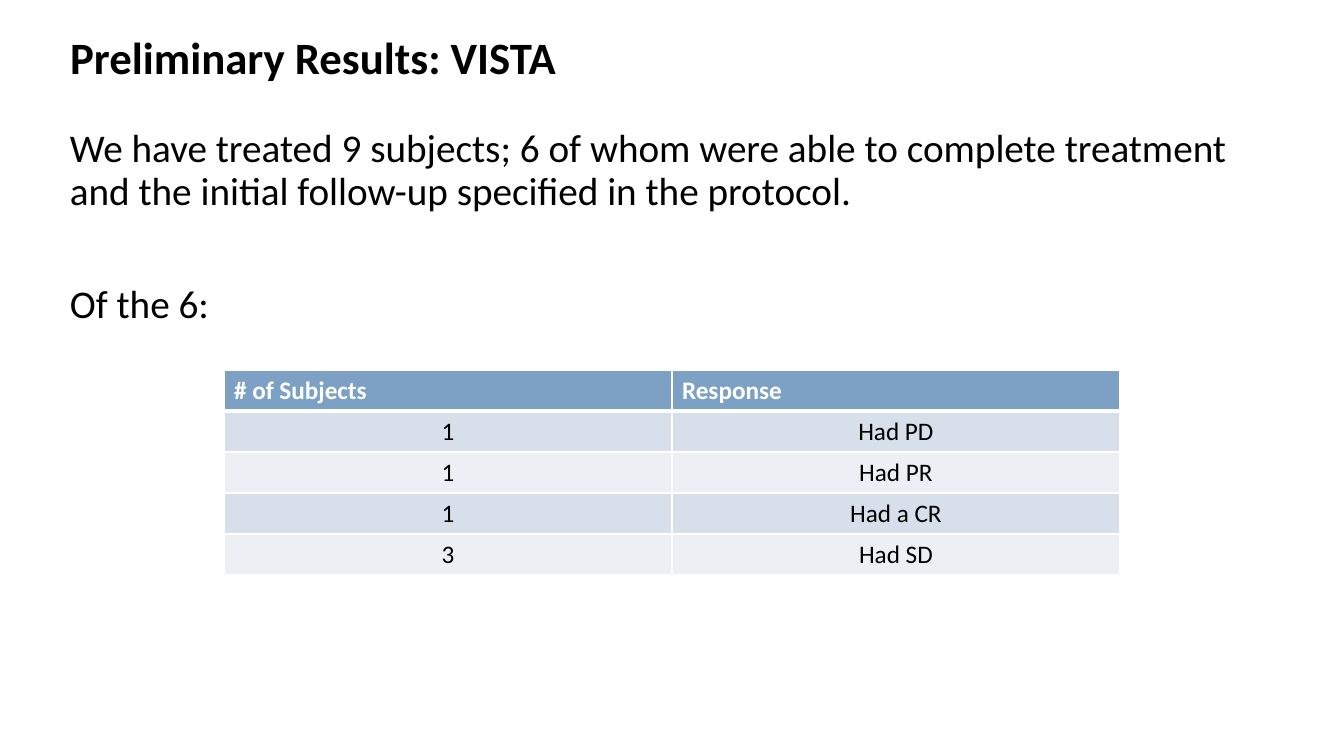
from lxml import etree
from pptx import Presentation
from pptx.dml.color import RGBColor
from pptx.enum.text import MSO_ANCHOR, MSO_AUTO_SIZE, PP_ALIGN
from pptx.oxml.ns import qn
from pptx.util import Pt

LEFT, CENTER = PP_ALIGN.LEFT, PP_ALIGN.CENTER
TOP, MIDDLE = MSO_ANCHOR.TOP, MSO_ANCHOR.MIDDLE
FIXED = MSO_AUTO_SIZE.NONE
PX = 914400 / 100.8
INK = {"text": "000000", "white": "FFFFFF", "head": "7DA1C4",
       "odd": "D7E0EA", "even": "ECF0F5"}


def px(*nums):
    return [round(num * PX) for num in nums]


def style(para, size, ink="text", bold=False, **form):
    for key, val in form.items():
        setattr(para, key, val)
    for key, val in {"name": "Calibri", "size": Pt(size), "bold": bold}.items():
        setattr(para.font, key, val)
    para.font.color.rgb = RGBColor.from_string(INK[ink])


deck = Presentation()
deck.slide_width, deck.slide_height = px(1344, 756)
slide = deck.slides.add_slide(deck.slide_layouts[5])

title = slide.shapes.title
place = dict(zip(("left", "top", "width", "height"), px(60, 27, 1005, 65)))
for key, val in place.items():
    setattr(title, key, val)
title.text_frame.text = "Preliminary Results: VISTA"
style(title.text_frame.paragraphs[0], 32, bold=True, alignment=LEFT, line_spacing=0.9)

body = slide.shapes.add_textbox(*px(60, 124, 1223, 572))
lines = [
    ("We have treated 9 subjects; 6 of whom were able to complete treatment "
     "and the initial follow-up specified in the protocol.", 0),
    ("Of the 6:", 51),
]
body.text_frame.text = "\n".join(text for text, gap in lines)
for para, (text, gap) in zip(body.text_frame.paragraphs, lines):
    style(para, 28, alignment=LEFT, line_spacing=0.9, space_before=Pt(gap))

for frame, anchor in ((title.text_frame, MIDDLE), (body.text_frame, TOP)):
    for key, val in {"word_wrap": True, "auto_size": FIXED,
                     "vertical_anchor": anchor}.items():
        setattr(frame, key, val)

data = [("# of Subjects", "Response"), ("1", "Had PD"), ("1", "Had PR"),
        ("1", "Had a CR"), ("3", "Had SD")]
table = slide.shapes.add_table(len(data), 2, *px(224, 370, 896, 205)).table
for col in table.columns:
    col.width = px(448)[0]
for row, texts in enumerate(data):
    table.rows[row].height = px(41)[0]
    fill = "head" if row == 0 else "odd" if row % 2 else "even"
    for col, text in enumerate(texts):
        cell = table.cell(row, col)
        cell.text = text
        props = cell._tc.get_or_add_tcPr()
        edges = {"lnL": 1, "lnR": 1, "lnT": 3 if row == 1 else 1,
                 "lnB": 3 if row == 0 else 1}
        for edge, wide in edges.items():
            line = etree.SubElement(props, qn("a:" + edge), w=str(Pt(wide)))
            solid = etree.SubElement(line, qn("a:solidFill"))
            etree.SubElement(solid, qn("a:srgbClr"), val=INK["white"])
        cell.fill.solid()
        cell.fill.fore_color.rgb = RGBColor.from_string(INK[fill])
        style(cell.text_frame.paragraphs[0], 18, "text" if row else "white",
              row == 0, alignment=CENTER if row else LEFT)

deck.save("out.pptx")
